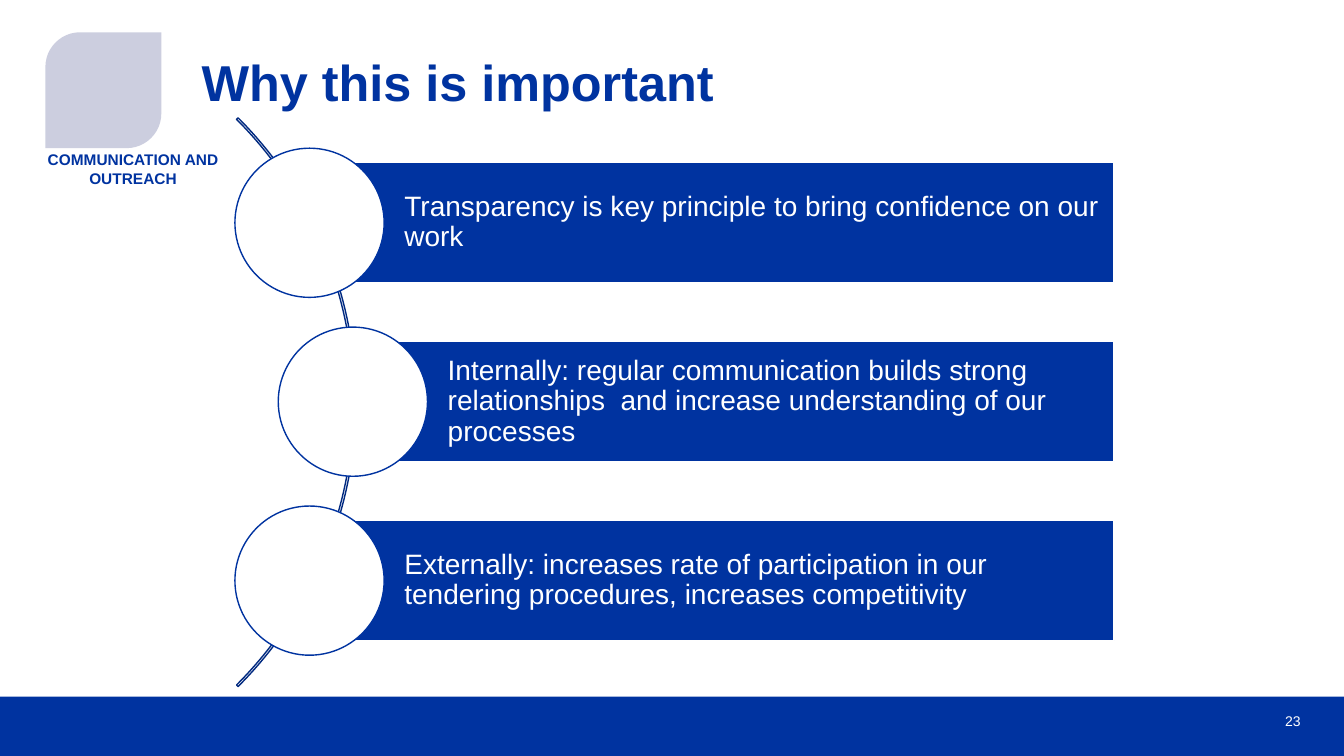
from dataclasses import dataclass

from pptx import Presentation
from pptx.dml.color import RGBColor as Rgb
from pptx.enum.shapes import MSO_SHAPE as Preset
from pptx.enum.text import MSO_ANCHOR as Anchor, PP_ALIGN as Align
from pptx.shapes.autoshape import Shape
from pptx.slide import Slide
from pptx.text.text import TextFrame
from pptx.util import Inches, Pt


@dataclass(frozen=True)
class Theme:
    font: str = "Arial"
    blue: Rgb = Rgb(0x00, 0x33, 0xA0)
    arc_blue: Rgb = Rgb(0x00, 0x29, 0x80)
    badge: Rgb = Rgb(0xCC, 0xCE, 0xDF)
    white: Rgb = Rgb(0xFF, 0xFF, 0xFF)
    title_size: int = 36
    body_size: int = 20
    label_size: int = 11
    number_size: int = 10


@dataclass(frozen=True)
class Box:
    left: float
    top: float
    width: float
    height: float

    def lengths(self) -> tuple[Inches, Inches, Inches, Inches]:
        return Inches(self.left), Inches(self.top), Inches(self.width), Inches(self.height)


@dataclass(frozen=True)
class Reason:
    text: str
    circle_left: float


THEME = Theme()
REASONS = (
    Reason("Transparency is key principle to bring confidence on our work", 2.33),
    Reason("Internally: regular communication builds strong relationships  and "
           "increase understanding of our processes", 2.76),
    Reason("Externally: increases rate of participation in our tendering "
           "procedures, increases competitivity", 2.33),
)
CIRCLE_SIZE = 1.48
FIRST_CIRCLE_TOP = 1.47
CIRCLE_PITCH = 3.55 / 2
BAR_HEIGHT = 1.19
BAR_RIGHT = 11.05
BAR_PADDING = 0.06


def add_preset(slide: Slide, preset: Preset, box: Box,
               fill: Rgb | None = None, line: Rgb | None = None) -> Shape:
    shape = slide.shapes.add_shape(preset, *box.lengths())
    shape.shadow.inherit = False
    if fill is None:
        shape.fill.background()
    else:
        shape.fill.solid()
        shape.fill.fore_color.rgb = fill
    if line is None:
        shape.line.fill.background()
    else:
        shape.line.color.rgb = line
        shape.line.width = Pt(1)
    return shape


def write(frame: TextFrame, text: str, size: int, color: Rgb, bold: bool = False,
          align: Align = Align.LEFT, anchor: Anchor = Anchor.TOP,
          line_spacing: float = 1.0, left_inset: float = 0, inset: float = 0) -> None:
    frame.word_wrap = True
    frame.vertical_anchor = anchor
    frame.margin_left = Inches(left_inset)
    frame.margin_top = frame.margin_right = frame.margin_bottom = Inches(inset)
    paragraph = frame.paragraphs[0]
    paragraph.text = text
    paragraph.alignment = align
    paragraph.line_spacing = line_spacing
    paragraph.space_before = Pt(0)
    font = paragraph.font
    font.name, font.size, font.bold = THEME.font, Pt(size), bold
    font.color.rgb = color


def add_title(slide: Slide) -> None:
    title = slide.shapes.title
    title.left, title.top, title.width, title.height = Box(2, 0.58, 10.41, 1.17).lengths()
    write(title.text_frame, "Why this is important", THEME.title_size, THEME.blue,
          bold=True, line_spacing=0.9)


def add_section_badge(slide: Slide) -> None:
    badge = add_preset(slide, Preset.ROUND_2_DIAG_RECTANGLE,
                       Box(0.45, 0.32, 1.15, 1.15), fill=THEME.badge)
    badge.adjustments[0] = 0.3
    badge.adjustments[1] = 0
    label = slide.shapes.add_textbox(*Box(0.45, 1.49, 1.74, 0.25).lengths())
    write(label.text_frame, "COMMUNICATION AND OUTREACH", THEME.label_size, THEME.blue,
          bold=True, align=Align.CENTER)


def add_footer(slide: Slide) -> None:
    add_preset(slide, Preset.RECTANGLE, Box(0, 6.91, 13.33, 0.59), fill=THEME.blue)
    number = slide.shapes.add_textbox(*Box(12.15, 6.95, 0.75, 0.4).lengths())
    write(number.text_frame, "23", THEME.number_size, THEME.white,
          align=Align.RIGHT, anchor=Anchor.MIDDLE)


def add_arc(slide: Slide) -> None:
    arc = add_preset(slide, Preset.BLOCK_ARC, Box(-4.45, 0, 7.98, 7.98), line=THEME.arc_blue)
    arc.adjustments[0] = 189
    arc.adjustments[1] = 27
    arc.adjustments[2] = 0.0027


def add_reason(slide: Slide, reason: Reason, circle_top: float) -> None:
    bar_left = reason.circle_left + CIRCLE_SIZE / 2
    bar_top = circle_top + (CIRCLE_SIZE - BAR_HEIGHT) / 2
    bar = add_preset(slide, Preset.RECTANGLE,
                     Box(bar_left, bar_top, BAR_RIGHT - bar_left, BAR_HEIGHT),
                     fill=THEME.blue, line=THEME.white)
    write(bar.text_frame, reason.text, THEME.body_size, THEME.white, anchor=Anchor.MIDDLE,
          line_spacing=0.9, left_inset=0.94, inset=BAR_PADDING)
    add_preset(slide, Preset.OVAL,
               Box(reason.circle_left, circle_top, CIRCLE_SIZE, CIRCLE_SIZE),
               fill=THEME.white, line=THEME.blue)


def main() -> None:
    deck = Presentation()
    deck.slide_width, deck.slide_height = Inches(13.33), Inches(7.5)
    slide = deck.slides.add_slide(deck.slide_layouts[5])
    add_footer(slide)
    add_section_badge(slide)
    add_title(slide)
    add_arc(slide)
    for row, reason in enumerate(REASONS):
        add_reason(slide, reason, FIRST_CIRCLE_TOP + row * CIRCLE_PITCH)
    deck.save("out.pptx")


if __name__ == "__main__":
    main()
